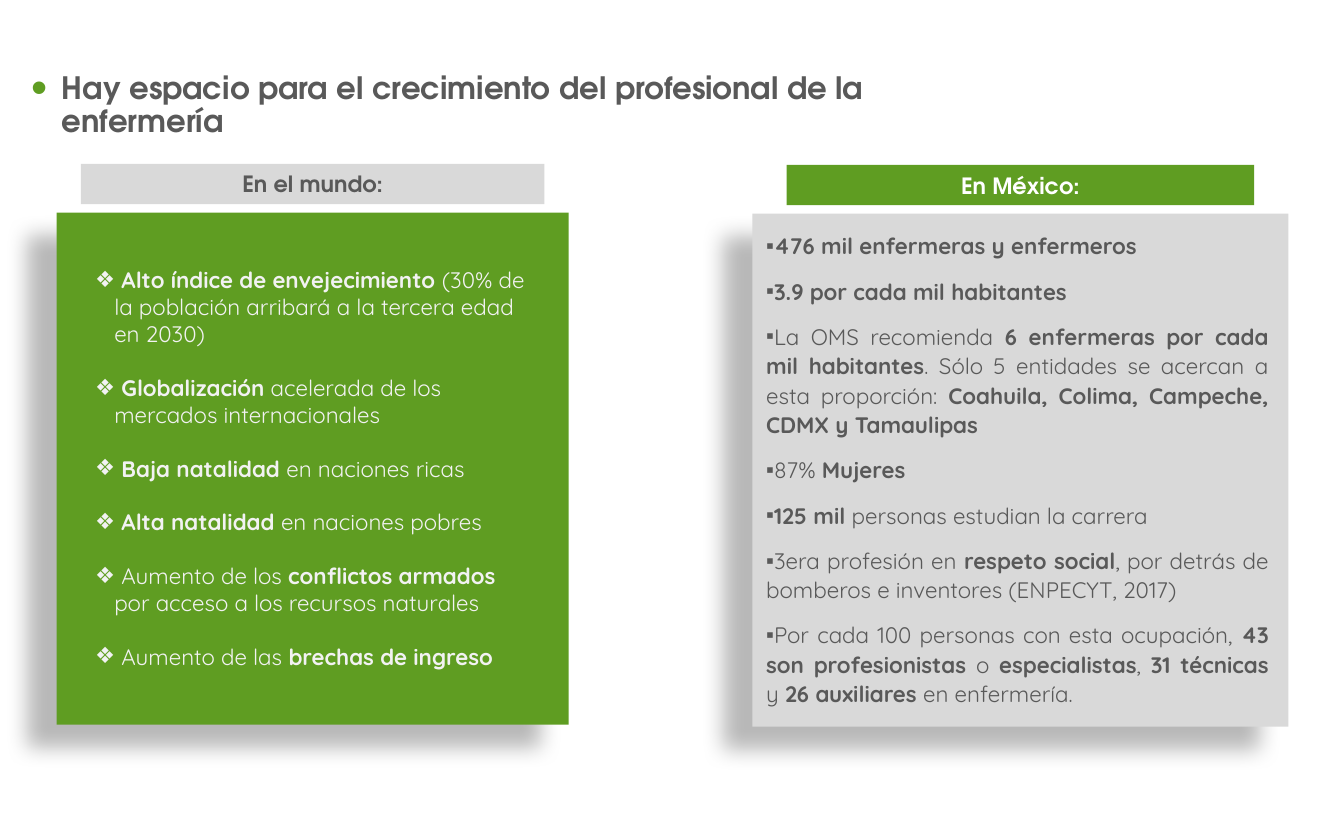
from lxml.etree import SubElement
from pptx import Presentation
from pptx.dml.color import RGBColor
from pptx.enum.shapes import MSO_SHAPE
from pptx.enum.text import MSO_ANCHOR, MSO_AUTO_SIZE, PP_ALIGN
from pptx.oxml.ns import qn
from pptx.util import Cm, Pt

GREEN, GRAY, DARK, WHITE, PALE = "5F9D22", "D9D9D9", "595959", "FFFFFF", "F2F2F2"
HEAD_FONT, BODY_FONT = "TeX Gyre Adventor", "Quicksand"

# Asterisks enclose bold words
WORLD = [
    " *Alto índice de envejecimiento *(30% de la población arribará a la tercera edad en 2030)",
    " *Globalización* acelerada de los mercados internacionales",
    " *Baja natalidad *en naciones ricas",
    " *Alta natalidad *en naciones pobres",
    " Aumento de los *conflictos armados *por acceso a los recursos naturales",
    " Aumento de las *brechas de ingreso*",
]
MEXICO = [
    "*476 mil enfermeras y enfermeros*",
    "*3.9 por cada mil habitantes*",
    "La OMS recomienda *6 enfermeras por cada mil habitantes*. Sólo 5 entidades se acercan "
    "a esta proporción: *Coahuila, Colima, Campeche, CDMX y Tamaulipas*",
    "87% *Mujeres*",
    "*125 mil *personas estudian la carrera",
    "3era profesión en *respeto social*, por detrás de bomberos e inventores (ENPECYT, 2017)",
    "Por cada 100 personas con esta ocupación, *43 son profesionistas *o *especialistas*, "
    "*31 técnicas *y *26 auxiliares *en enfermería.",
]


def rgb(color):
    return RGBColor.from_string(color)


def style(font, name, size, color, bold):
    font.name, font.size, font.bold = name, Pt(size), bold
    font.color.rgb = rgb(color)


def bullet(p, char, left, hang, color=None, percent=None):
    pPr = p._p.get_or_add_pPr()
    pPr.set("marL", str(Cm(left)))
    pPr.set("indent", str(-Cm(hang)))
    if color:
        SubElement(SubElement(pPr, qn("a:buClr")), qn("a:srgbClr"), val=color)
    if percent:
        SubElement(pPr, qn("a:buSzPct"), val=str(percent * 1000))
    SubElement(pPr, qn("a:buFont"), typeface="Arial")
    SubElement(pPr, qn("a:buChar"), char=char)


def place(sp, x, y, w, h):
    sp.left, sp.top, sp.width, sp.height = Cm(x), Cm(y), Cm(w), Cm(h)


def frame(sp, anchor, inset_x, inset_y):
    tf = sp.text_frame
    tf.word_wrap, tf.auto_size = True, MSO_AUTO_SIZE.NONE
    tf.vertical_anchor = anchor
    tf.margin_left = tf.margin_right = Cm(inset_x)
    tf.margin_top = tf.margin_bottom = Cm(inset_y)
    return tf


def rect(s, x, y, w, h, color):
    sp = s.shapes.add_shape(MSO_SHAPE.RECTANGLE, Cm(x), Cm(y), Cm(w), Cm(h))
    sp.fill.solid()
    sp.fill.fore_color.rgb = rgb(color)
    sp.line.fill.background()
    sp.shadow.inherit = False
    return sp


def cast_shadow(sp):
    effects = sp.element.spPr.find(qn("a:effectLst"))
    shadow = SubElement(effects, qn("a:outerShdw"), blurRad=str(Pt(11.8)),
                        dist=str(Pt(19.7)), dir=str(141 * 60000), rotWithShape="0")
    color = SubElement(shadow, qn("a:srgbClr"), val="000000")
    SubElement(color, qn("a:alpha"), val="28000")


def heading(s, x, y, w, h):
    sp = s.shapes.title
    place(sp, x, y, w, h)
    tf = frame(sp, MSO_ANCHOR.MIDDLE, 0.18, 0.1)
    tf.text = "Hay espacio para el crecimiento del profesional de la enfermería"
    p = tf.paragraphs[0]
    bullet(p, "•", 0.58, 0.58, GREEN, 150)
    p.alignment, p.line_spacing, p.space_before = PP_ALIGN.LEFT, 0.9, Pt(0)
    style(p.runs[0].font, HEAD_FONT, 16.5, DARK, True)


def panel(s, sp, box, title, bar, card, margins, insets, anchor):
    """Header bar (width, colour, text colour) above a card holding sp."""
    x, y, w, h = box
    bar_w, bar_color, bar_ink = bar
    # Header bar
    head = rect(s, x + (w - bar_w) / 2, y, bar_w, 0.76, bar_color)
    tf = frame(head, MSO_ANCHOR.MIDDLE, 0.1, 0)
    tf.text = title
    p = tf.paragraphs[0]
    p.alignment = PP_ALIGN.CENTER
    style(p.runs[0].font, HEAD_FONT, 12, bar_ink, True)
    # Card, kept behind the list
    top = y + 0.92
    back = rect(s, x, top, w, h - 0.92, card)
    cast_shadow(back)
    sp.element.addprevious(back.element)
    # List area
    left, above, text_w, text_h = margins
    place(sp, x + left, top + above, text_w, text_h)
    return frame(sp, anchor, *insets)


def fill_list(tf, items, mark, color, align, spacing, gap):
    char, left, hang = mark
    for i, item in enumerate(items):
        p = tf.paragraphs[0] if i == 0 else tf.add_paragraph()
        bullet(p, char, left, hang)
        p.alignment, p.line_spacing = align, spacing
        p.space_before = Pt(gap if i else 0)
        for j, part in enumerate(item.split("*")):
            if part:
                r = p.add_run()
                r.text = part
                style(r.font, BODY_FONT, 12, color, j % 2 == 1)


def main():
    prs = Presentation()
    prs.slide_width, prs.slide_height = Cm(25.4), Cm(15.88)
    s = prs.slides.add_slide(prs.slide_layouts[3])
    heading(s, 0.41, 1.32, 19.08, 1.37)
    # World
    tf = panel(s, s.placeholders[1], (1.07, 3.1, 9.68, 10.6), "En el mundo:",
               (8.76, GRAY, DARK), GREEN, (0.48, 0.89, 8.71, 7.95),
               (0.25, 0.13), MSO_ANCHOR.TOP)
    fill_list(tf, WORLD, ("❖", 0.36, 0.36), PALE, PP_ALIGN.LEFT, 1.0, 14.4)
    # Mexico
    tf = panel(s, s.placeholders[2], (14.22, 3.12, 10.13, 10.62), "En México:",
               (8.84, GREEN, WHITE), GRAY, (0.16, 0.25, 9.7, 9.14),
               (0.1, 0.1), MSO_ANCHOR.MIDDLE)
    fill_list(tf, MEXICO, ("▪", 0, 0.58), DARK, PP_ALIGN.JUSTIFY, 1.1, 8.4)
    prs.save("out.pptx")


if __name__ == "__main__":
    main()
